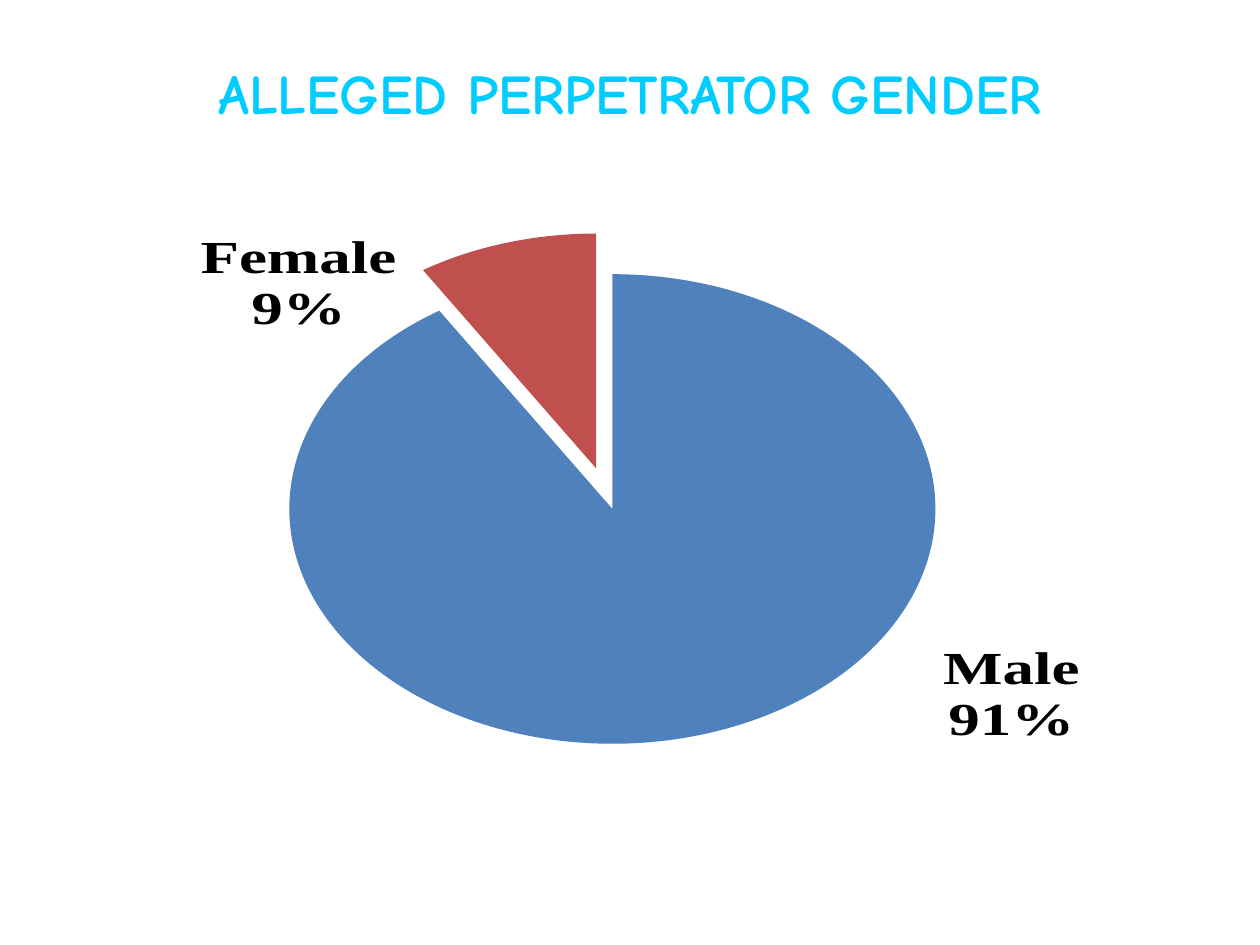
from copy import deepcopy
from typing import NamedTuple

from lxml.etree import SubElement
from pptx import Presentation
from pptx.chart.data import CategoryChartData
from pptx.dml.color import RGBColor
from pptx.enum.chart import XL_CHART_TYPE, XL_LABEL_POSITION
from pptx.enum.text import MSO_ANCHOR, PP_ALIGN
from pptx.oxml.ns import qn
from pptx.util import Pt

BLACK = RGBColor(0x00, 0x00, 0x00)
BLUE = RGBColor(0x4F, 0x81, 0xBD)
RED = RGBColor(0xC0, 0x50, 0x4D)
CYAN = RGBColor(0x00, 0xCC, 0xFF)


class Slice(NamedTuple):
    gender: str
    percent: int
    color: RGBColor
    label_shift: dict  # fractions of the chart's width and height


SLICES = [
    Slice("Male", 91, BLUE, {"x": 0.2, "y": -0.07}),
    Slice("Female", 9, RED, {"x": -0.09, "y": 0.07}),
]
EXPLOSION = 9
PLOT_AREA = {"layoutTarget": "inner", "xMode": "edge", "yMode": "edge",
             "x": 0.167, "y": 0, "w": 0.626, "h": 1}
TITLE_FONT = {"name": "Comic Neue", "size": Pt(32), "bold": True}
CHART_FONT = {"name": "Calibri", "size": Pt(18)}
LABEL_FONT = {"name": "Times New Roman", "size": Pt(36), "bold": True}
LABEL_FORMAT = {
    "show_category_name": True,
    "show_percentage": True,
    "show_value": False,
    "position": XL_LABEL_POSITION.OUTSIDE_END,
}


def set_attributes(target, values: dict) -> None:
    for name, value in values.items():
        setattr(target, name, value)


def set_font(font, values: dict, color: RGBColor) -> None:
    set_attributes(font, values)
    font.color.rgb = color


def add_title(s, text: str) -> None:
    sp = s.shapes.title
    set_attributes(sp, {"left": Pt(36), "top": Pt(30),
                        "width": Pt(648), "height": Pt(54)})
    tf = sp.text_frame
    set_attributes(tf, {"word_wrap": True, "vertical_anchor": MSO_ANCHOR.TOP})
    p = tf.paragraphs[0]
    p.alignment = PP_ALIGN.CENTER
    r = p.add_run()
    r.text = text
    set_font(r.font, TITLE_FONT, CYAN)


def add_layout(parent, values: dict):
    layout = SubElement(parent, qn("c:layout"))
    manual = SubElement(layout, qn("c:manualLayout"))
    for name, value in values.items():
        SubElement(manual, qn(f"c:{name}")).set("val", str(value))
    return layout


def set_plot_layout(chart) -> None:
    plot_area = chart.plots[0]._element.getparent()
    for old in plot_area.findall(qn("c:layout")):
        plot_area.remove(old)
    plot_area.insert(0, add_layout(plot_area, PLOT_AREA))


def format_labels(series, slices: list[Slice]) -> None:
    labels = series.data_labels
    set_attributes(labels, LABEL_FORMAT)
    set_font(labels.font, LABEL_FONT, BLACK)
    group = labels._element
    for old in group.findall(qn("c:showLeaderLines")):
        group.remove(old)
    SubElement(group, qn("c:separator")).text = "\n"
    shared = list(group)
    # Each label keeps the shared format and takes its own shift
    for i, item in enumerate(slices):
        label = SubElement(group, qn("c:dLbl"))
        SubElement(label, qn("c:idx")).set("val", str(i))
        add_layout(label, item.label_shift)
        label.extend(deepcopy(shared))
        group.insert(i, label)
    SubElement(group, qn("c:showLeaderLines")).set("val", "0")


def add_gender_pie(s, slices: list[Slice]) -> None:
    data = CategoryChartData()
    data.categories = [item.gender for item in slices]
    data.add_series("Series 1", [item.percent for item in slices])
    chart = s.shapes.add_chart(XL_CHART_TYPE.PIE, Pt(18), Pt(78),
                               Pt(682), Pt(402.5), data).chart
    set_attributes(chart, {"has_title": False, "has_legend": False})
    set_font(chart.font, CHART_FONT, BLACK)
    set_plot_layout(chart)

    # Slice colours and the gap between slices
    plot = chart.plots[0]
    plot.vary_by_categories = True
    series = plot.series[0]
    for i, item in enumerate(slices):
        fill = series.points[i].format.fill
        fill.solid()
        fill.fore_color.rgb = item.color
    explosion = SubElement(series._element, qn("c:explosion"))
    explosion.set("val", str(EXPLOSION))
    series._element.find(qn("c:dPt")).addprevious(explosion)

    # Gender above percentage
    format_labels(series, slices)


def main() -> None:
    prs = Presentation()
    set_attributes(prs, {"slide_width": Pt(720), "slide_height": Pt(540)})
    s = prs.slides.add_slide(prs.slide_layouts[5])
    add_gender_pie(s, SLICES)
    add_title(s, "ALLEGED PERPETRATOR GENDER")
    prs.save("out.pptx")


if __name__ == "__main__":
    main()
